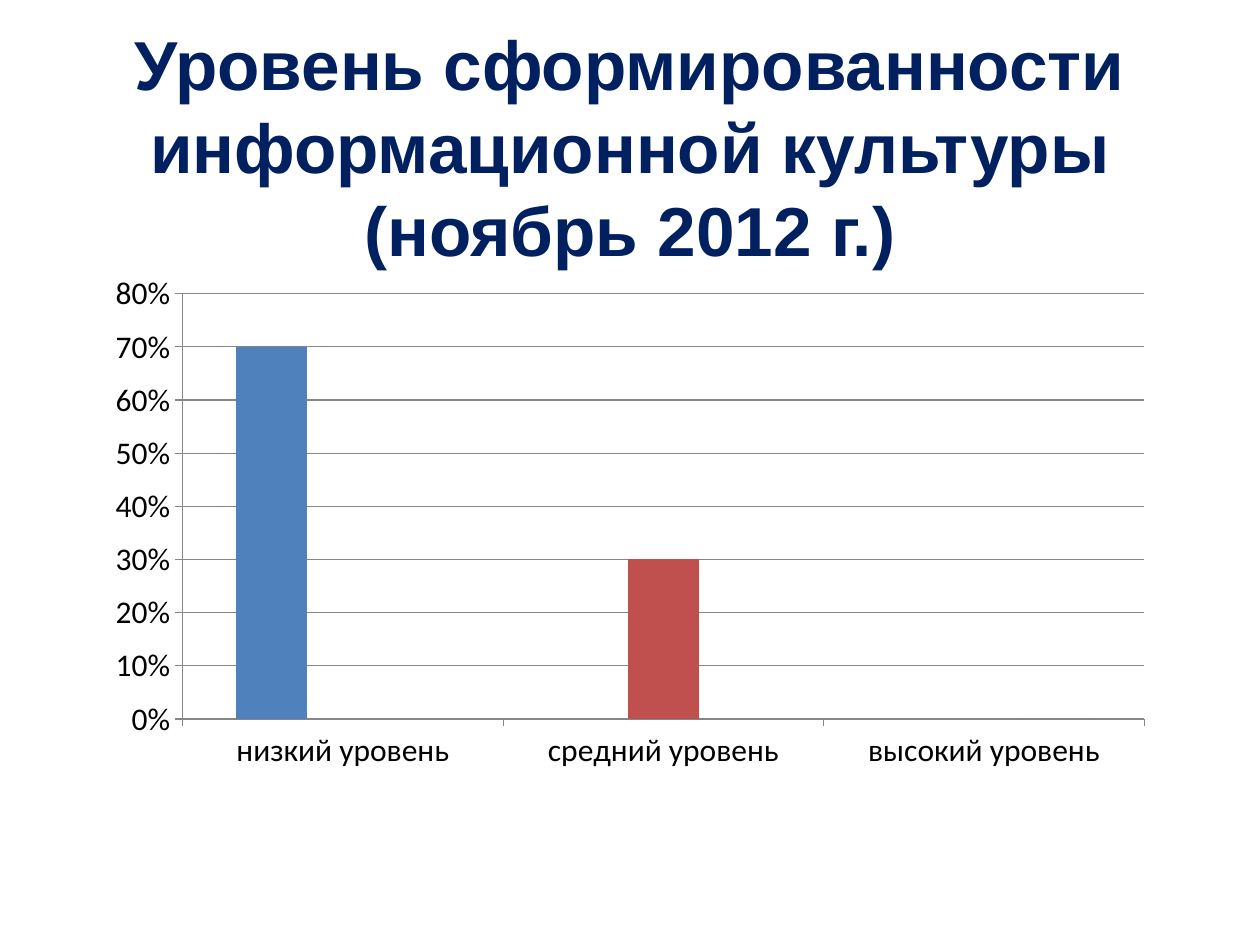
from lxml.etree import SubElement
from pptx import Presentation
from pptx.chart.data import CategoryChartData
from pptx.dml.color import RGBColor
from pptx.enum.chart import XL_CHART_TYPE, XL_TICK_MARK
from pptx.enum.text import MSO_ANCHOR, MSO_AUTO_SIZE, PP_ALIGN
from pptx.oxml.ns import qn
from pptx.util import Cm, Pt

NAVY = RGBColor(0x00, 0x20, 0x60)
WHITE = RGBColor(0xFF, 0xFF, 0xFF)
BLACK = RGBColor(0x00, 0x00, 0x00)
GRAY = RGBColor(0x86, 0x86, 0x86)
BLUE = RGBColor(0x4F, 0x81, 0xBD)
RED = RGBColor(0xC0, 0x50, 0x4D)
GREEN = RGBColor(0x9B, 0xBB, 0x59)


class SlideBuilder:
    """Holds the style and the current slide."""

    title_font = "Arial"
    chart_font = "Calibri"

    def __init__(self, prs):
        self.s = prs.slides.add_slide(prs.slide_layouts[5])

    def title(self, text, left, top, width, height):
        sp = self.s.shapes.title
        sp.left, sp.top, sp.width, sp.height = left, top, width, height
        tf = sp.text_frame
        tf.word_wrap = True
        tf.auto_size = MSO_AUTO_SIZE.NONE
        tf.vertical_anchor = MSO_ANCHOR.MIDDLE
        p = tf.paragraphs[0]
        p.alignment = PP_ALIGN.CENTER
        r = p.add_run()
        r.text = text
        r.font.name = self.title_font
        r.font.size = Pt(39.6)
        r.font.bold = True
        r.font.color.rgb = NAVY
        self.outline(r, WHITE, Pt(1.4))

    def outline(self, r, color, width):
        rPr = r.font._element
        ln = SubElement(rPr, qn("a:ln"), w=str(width))
        fill = SubElement(ln, qn("a:solidFill"))
        SubElement(fill, qn("a:srgbClr"), val=str(color))
        rPr.insert(0, ln)  # the outline comes before the fill

    def column_chart(self, categories, series, left, top, width, height):
        data = CategoryChartData(number_format="0%")
        data.categories = categories
        for name, values, _ in series:
            data.add_series(name, values)
        chart = self.s.shapes.add_chart(
            XL_CHART_TYPE.COLUMN_CLUSTERED, left, top, width, height, data).chart
        chart.has_legend = False
        chart.has_title = False
        chart.font.name = self.chart_font
        chart.font.size = Pt(18)
        chart.font.color.rgb = BLACK

        # Columns
        plot = chart.plots[0]
        plot.vary_by_categories = False
        plot.gap_width = 150
        plot.overlap = 0
        for ser, (_, _, color) in zip(plot.series, series):
            ser.format.fill.solid()
            ser.format.fill.fore_color.rgb = color

        # Axes and gridlines
        for axis in (chart.category_axis, chart.value_axis):
            axis.major_tick_mark = XL_TICK_MARK.OUTSIDE
            axis.minor_tick_mark = XL_TICK_MARK.NONE
            self.line(axis.format.line)
        value_axis = chart.value_axis
        value_axis.minimum_scale = 0
        value_axis.maximum_scale = 0.8
        value_axis.major_unit = 0.1
        value_axis.has_major_gridlines = True
        self.line(value_axis.major_gridlines.format.line)

    def line(self, line):
        line.color.rgb = GRAY
        line.width = Pt(0.75)


def main():
    prs = Presentation()
    prs.slide_width, prs.slide_height = Cm(25.4), Cm(19.05)
    b = SlideBuilder(prs)

    # Heading
    b.title("Уровень сформированности информационной культуры (ноябрь 2012 г.)",
            Cm(1.27), Cm(0.76), Cm(22.86), Cm(4.37))

    # Levels in percent, one series per level
    b.column_chart(
        ["низкий уровень", "средний уровень", "высокий уровень"],
        [("Series 1", (0.7, None, None), BLUE),
         ("Series 2", (None, 0.3, None), RED),
         ("Series 3", (None, None, 0), GREEN)],
        Cm(1.9), Cm(5.33), Cm(21.6), Cm(10.39))

    prs.save("out.pptx")


if __name__ == "__main__":
    main()
